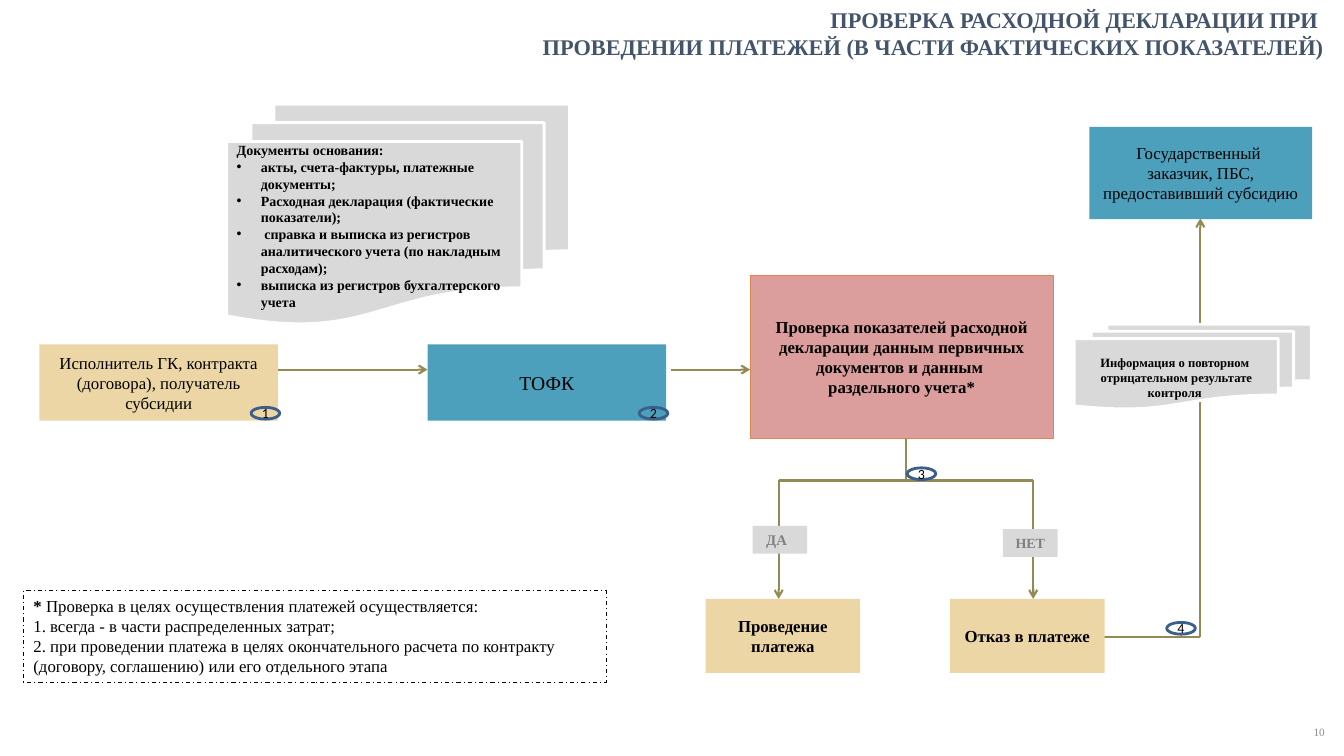
from lxml import etree
from pptx import Presentation
from pptx.dml.color import RGBColor
from pptx.enum.dml import MSO_LINE
from pptx.enum.shapes import MSO_CONNECTOR, MSO_SHAPE
from pptx.enum.text import MSO_ANCHOR, PP_ALIGN
from pptx.oxml.ns import qn
from pptx.util import Inches, Pt

RECTANGLE, ELLIPSE = MSO_SHAPE.RECTANGLE, MSO_SHAPE.OVAL
DOCUMENTS = MSO_SHAPE.FLOWCHART_MULTIDOCUMENT
STRAIGHT, DASH_DOT = MSO_CONNECTOR.STRAIGHT, MSO_LINE.DASH_DOT
LEFT, CENTER, RIGHT = PP_ALIGN.LEFT, PP_ALIGN.CENTER, PP_ALIGN.RIGHT
TOP, MIDDLE = MSO_ANCHOR.TOP, MSO_ANCHOR.MIDDLE

SLIDE_WIDTH, SLIDE_HEIGHT = Inches(13.33), Inches(7.5)
COLUMN, ROW = SLIDE_WIDTH / 160, SLIDE_HEIGHT / 90
SERIF, SANS = "Times New Roman", "Calibri"
BLACK, WHITE, GREY, SAND, TEAL = "000000", "FFFFFF", "D9D9D9", "ECD6A5", "4DA0BB"
OLIVE, NAVY = "948A54", "3A5F8C"
TEXT_INSETS = (0.1, 0.05, 0.1, 0.05)
BOX_INSETS = (0.08, 0.04, 0.08, 0.04)


def color(value):
    return RGBColor.from_string(value)


def inside(region, column, row, columns, rows):
    return region[0] + column, region[1] + row, columns, rows


def place(shape, box):
    left, top, width, height = box
    shape.left, shape.top = round(left * COLUMN), round(top * ROW)
    shape.width, shape.height = round(width * COLUMN), round(height * ROW)


def write(shape, lines, size, bold=False, ink=BLACK, font=SERIF, align=CENTER,
          anchor=MIDDLE, insets=BOX_INSETS, wrap=True):
    frame = shape.text_frame
    frame.text = "\n".join(lines)
    frame.word_wrap = wrap
    frame.vertical_anchor = anchor
    frame.margin_left, frame.margin_top, frame.margin_right, frame.margin_bottom = map(Inches, insets)
    for paragraph in frame.paragraphs:
        paragraph.alignment = align
        for run in paragraph.runs:
            run.font.size, run.font.bold, run.font.name = Pt(size), bold, font
            run.font.color.rgb = color(ink)


def add_box(slide, box, fill=None, line=None, line_width=2, kind=RECTANGLE):
    shape = slide.shapes.add_shape(kind, 0, 0, 0, 0)
    place(shape, box)
    shape.shadow.inherit = False
    if fill:
        shape.fill.solid()
        shape.fill.fore_color.rgb = color(fill)
    else:
        shape.fill.background()
    if line:
        shape.line.color.rgb = color(line)
        shape.line.width = Pt(line_width)
    else:
        shape.line.fill.background()
    return shape


def add_line(slide, region, start, end, arrow=False):
    points = [round((region[axis] + point[axis]) * unit)
              for point in (start, end) for axis, unit in enumerate((COLUMN, ROW))]
    connector = slide.shapes.add_connector(STRAIGHT, *points)
    connector.line.color.rgb = color(OLIVE)
    connector.line.width = Pt(1.5)
    if arrow:
        line = connector.line._get_or_add_ln()
        etree.SubElement(line, qn("a:tailEnd"), type="arrow")
    etree.SubElement(connector._element.spPr, qn("a:effectLst"))


def add_step(slide, region, column, row, number):
    shape = add_box(slide, inside(region, column, row, 3.4, 1.4), line=NAVY, kind=ELLIPSE)
    write(shape, [number], 10, font=SANS, insets=(0, 0, 0, 0), wrap=False)


def add_bullet(paragraph):
    properties = paragraph._p.get_or_add_pPr()
    properties.set("marL", str(Inches(0.24)))
    properties.set("indent", str(-Inches(0.24)))
    etree.SubElement(properties, qn("a:buFont"), typeface="Arial")
    etree.SubElement(properties, qn("a:buChar"), char="•")


def add_title(slide, box):
    title = slide.shapes.title
    place(title, box)
    write(title, ["ПРОВЕРКА РАСХОДНОЙ ДЕКЛАРАЦИИ ПРИ ",
                  "ПРОВЕДЕНИИ ПЛАТЕЖЕЙ (В ЧАСТИ ФАКТИЧЕСКИХ ПОКАЗАТЕЛЕЙ)"],
          16, True, "44546A", align=RIGHT, insets=TEXT_INSETS)
    for paragraph in title.text_frame.paragraphs:
        paragraph.line_spacing = 1.0
        paragraph.space_before = Pt(0)


def add_feedback(slide, region):
    bottom, riser = region[3], 15
    add_line(slide, region, (riser, bottom), (riser, 10.9), arrow=True)
    customer = add_box(slide, inside(region, 1.8, 0, 26.5, 11), TEAL)
    write(customer, ["Государственный ", "заказчик, ПБС, предоставивший субсидию"], 12)
    report = add_box(slide, inside(region, 0, 23.5, 28.2, 10.1), GREY, WHITE, kind=DOCUMENTS)
    write(report, ["Информация о повторном  отрицательном результате контроля "],
          9, True, insets=(0.1, 0.1, 0.1, 0))
    add_line(slide, region, (3.5, bottom), (riser, bottom))
    add_step(slide, region, 11, bottom - 1.7, "4")


def add_submission(slide, region):
    documents = add_box(slide, inside(region, 22.3, 0, 40.8, 26.2), GREY, WHITE, kind=DOCUMENTS)
    write(documents, [
        "Документы основания:",
        "акты, счета-фактуры, платежные документы;",
        "Расходная декларация (фактические показатели);",
        " справка и выписка из регистров аналитического учета (по накладным расходам);",
        "выписка из регистров бухгалтерского учета",
    ], 10, True, align=LEFT, anchor=TOP, insets=(0.1, 0, 0.1, 0))
    for paragraph in documents.text_frame.paragraphs[1:]:
        add_bullet(paragraph)
    width, height = 28.4, 9.1
    top, treasury_left = region[3] - height, region[2] - width
    parties = [
        (0, SAND, "Исполнитель ГК, контракта (договора), получатель субсидии", 12, "1"),
        (treasury_left, TEAL, "ТОФК", 14, "2"),
    ]
    for column, fill, text, size, number in parties:
        party = add_box(slide, inside(region, column, top, width, height), fill)
        write(party, [text], size)
        add_step(slide, region, column + 25.2, top + 7.5, number)
    add_line(slide, region, (width, top + 3), (treasury_left, top + 3), arrow=True)


def add_check(slide, region):
    check = add_box(slide, inside(region, 9.4, 0, 36.1, 19.4), "D99694", "E2834E", 0.75)
    fill_color = check.fill._xPr.find(qn("a:solidFill"))[0]
    etree.SubElement(fill_color, qn("a:alpha"), val="92000")
    write(check, ["Проверка показателей расходной декларации данным первичных документов и данным ",
                  "раздельного учета*"], 12, True)
    add_line(slide, region, (0, 11.2), (9.4, 11.2), arrow=True)
    stem, fork, result_top = 28, 24.4, 38.5
    branches = [
        (12.8, 9.7, 29.8, " ДА", LEFT, 10.5, 4.1, "Проведение платежа"),
        (43.1, 39.5, 30.2, "НЕТ", CENTER, 10, 33.2, "Отказ в платеже"),
    ]
    add_line(slide, region, (stem, 19.5), (stem, fork))
    add_line(slide, region, (branches[0][0], fork), (branches[1][0], fork))
    for axis, label_left, label_top, answer, align, size, result_left, outcome in branches:
        add_line(slide, region, (axis, fork), (axis, result_top), arrow=True)
        label = add_box(slide, inside(region, label_left, label_top, 6.5, 3.3), GREY)
        write(label, [answer], size, True, "808080", align=align, insets=TEXT_INSETS)
        result = add_box(slide, inside(region, result_left, result_top, 18.4, 8.8), SAND)
        write(result, [outcome], 12, True)
    add_step(slide, region, stem + 0.1, fork - 1.5, "3")


def add_footnote(slide, box):
    note = add_box(slide, box, line=BLACK, line_width=0.75)
    note.line.dash_style = DASH_DOT
    write(note, [
        "Проверка в целях осуществления платежей осуществляется:",
        "1. всегда - в части распределенных затрат;",
        "2. при проведении платежа в целях окончательного расчета по контракту "
        "(договору, соглашению) или его отдельного этапа",
    ], 12, align=LEFT, anchor=TOP, insets=TEXT_INSETS)
    paragraph = note.text_frame.paragraphs[0]
    text = paragraph.text
    paragraph.runs[0].text = "* "
    paragraph.runs[0].font.bold = True
    rest = paragraph.add_run()
    rest.text = text
    rest.font.size, rest.font.name, rest.font.bold = Pt(12), SERIF, False
    rest.font.color.rgb = color(BLACK)


def add_page_number(slide, box):
    number = slide.shapes.add_textbox(0, 0, 0, 0)
    place(number, box)
    write(number, ["10"], 8, ink="8C8C8C", align=RIGHT, insets=(0, 0, 0.1, 0))


def main():
    presentation = Presentation()
    presentation.slide_width, presentation.slide_height = SLIDE_WIDTH, SLIDE_HEIGHT
    slide = presentation.slides.add_slide(presentation.slide_layouts[5])
    add_title(slide, (45.6, 0.3, 113.2, 7.2))
    add_feedback(slide, (127.9, 15.1, 28.3, 60.7))
    add_submission(slide, (4.7, 12.4, 74.6, 37.7))
    add_check(slide, (79.9, 32.8, 51.5, 47.3))
    add_footnote(slide, (2.8, 70.3, 69.4, 10.9))
    add_page_number(slide, (152.5, 86.3, 6.4, 1.6))
    presentation.save("out.pptx")


if __name__ == "__main__":
    main()
